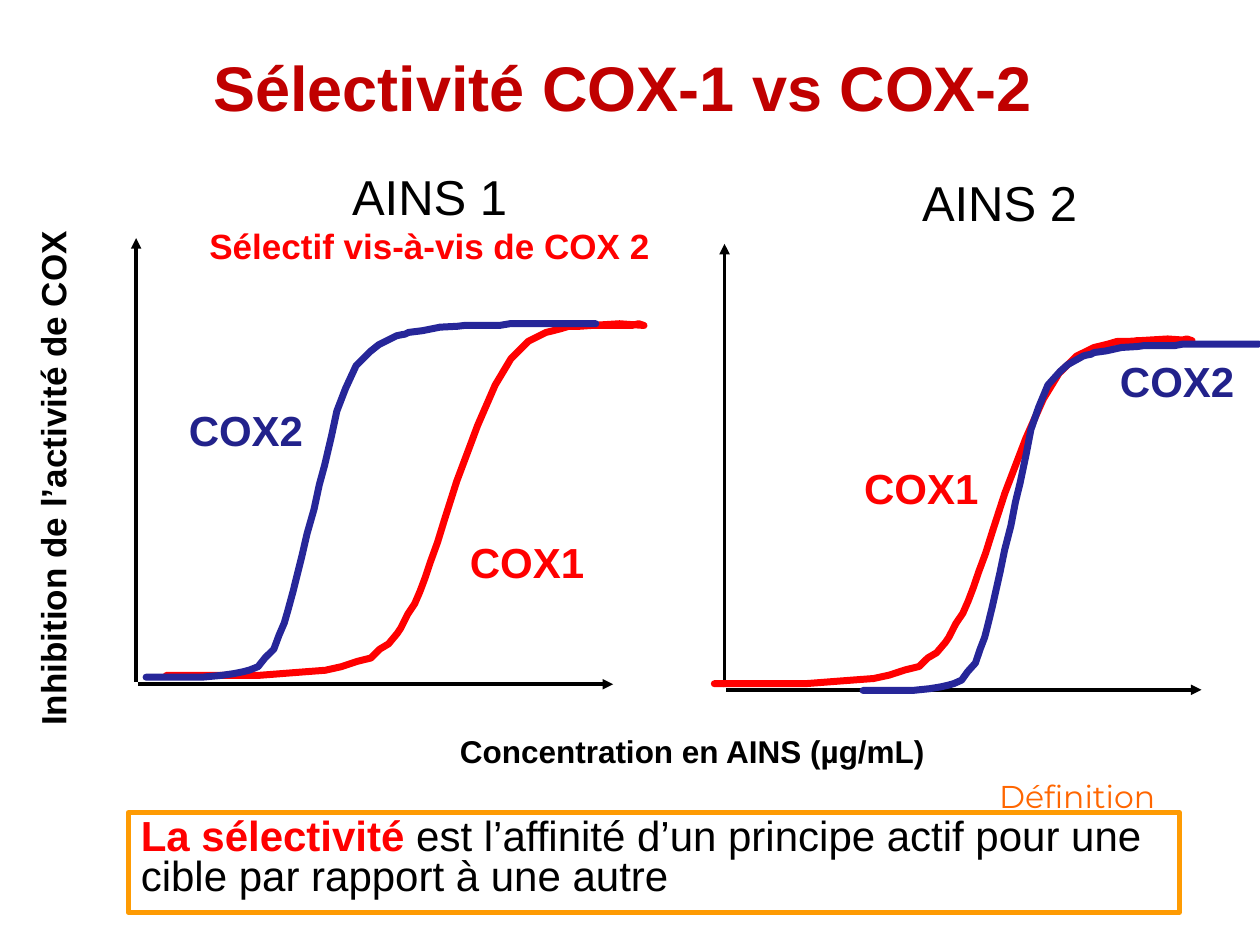
from lxml.etree import SubElement
from pptx import Presentation
from pptx.dml.color import RGBColor
from pptx.enum.shapes import MSO_CONNECTOR, MSO_SHAPE
from pptx.enum.text import MSO_ANCHOR as ANCHOR, MSO_AUTO_SIZE as AUTO, PP_ALIGN as ALIGN
from pptx.oxml.ns import qn
from pptx.util import Pt

rgb = RGBColor.from_string
BLACK, RED, TITLE_RED = "000000", "FF0000", "C00000"
CURVE_BLUE, LABEL_BLUE, ORANGE = "262699", "22228B", "FF6600"


def write(para, text, size=24, color=BLACK, bold=False, font="Arial", align=ALIGN.LEFT):
    """Append one formatted span to a paragraph."""
    para.alignment = align
    span = para.add_run()
    span.text = text
    span.font.size, span.font.bold, span.font.name = Pt(size), bold, font
    span.font.color.rgb = rgb(color)


def style_line(shape, color, width):
    """Set the line and return its XML element, without any shadow."""
    shape.line.color.rgb = rgb(color)
    shape.line.width = Pt(width)
    properties = shape.line._get_or_add_ln()
    if properties.getparent().find(qn("a:effectLst")) is None:
        SubElement(properties.getparent(), qn("a:effectLst"))
    return properties


deck = Presentation()
deck.slide_width, deck.slide_height = Pt(720), Pt(540)
slide = deck.slides.add_slide(deck.slide_layouts[6])
shapes = slide.shapes

# Title
title = shapes.add_textbox(Pt(33.8), Pt(3.6), Pt(644.4), Pt(97.2))
frame = title.text_frame
frame.word_wrap, frame.vertical_anchor = True, ANCHOR.MIDDLE
frame.margin_left = frame.margin_right = Pt(16)
frame.margin_top = frame.margin_bottom = Pt(9.4)
frame.paragraphs[0].line_spacing = 0.9
write(frame.paragraphs[0], "Sélectivité COX-1 vs COX-2", size=36, color=TITLE_RED,
      bold=True, align=ALIGN.CENTER)

# Axes of both plots: the vertical one points up, the horizontal one right
for left, top in [(77.8, 136.1), (414, 139.3)]:
    base = top + 254.9
    for x1, y1, x2, y2 in [(left, base - 1.4, left, top), (left + 1, base, left + 272.6, base)]:
        axis = shapes.add_connector(MSO_CONNECTOR.STRAIGHT, Pt(x1), Pt(y1), Pt(x2), Pt(y2))
        SubElement(style_line(axis, BLACK, 2), qn("a:tailEnd"), type="triangle")

# Dose-response curves, in points from the top left of each curve
cox1 = [(0, 201), (52, 201), (78, 199), (91, 198), (100, 196), (109, 193), (117, 191),
        (122, 186), (127, 183), (132, 177), (134, 174), (138, 166), (142, 160), (145, 153),
        (148, 145), (151, 136), (155, 125), (159, 112), (166, 90), (178, 58), (188, 35),
        (197, 20), (207, 10), (217, 5), (221, 4), (225, 3), (230, 1.5), (236, 1.5),
        (243, 1), (259, 0), (273, 1), (270, 0), (266, 1), (251, 1), (241, 1)]
cox2 = [(0, 202), (32, 202), (43, 201), (50, 200), (55, 199), (59, 198), (64, 196),
        (68, 191), (73, 186), (76, 178), (79, 171), (81, 164), (84, 153), (86, 145),
        (89, 133), (92, 120), (96, 106), (99, 92), (102, 81), (106, 64), (109, 50),
        (114, 37), (120, 24), (125, 19), (128, 16), (133, 12), (139, 9), (143, 7),
        (145, 6.5), (148, 6), (150, 5), (158, 4), (168, 2), (178, 1.5), (182, 1),
        (202, 1), (208, 0), (257, 0)]
curves = [  # points, colour, left, top, horizontal and vertical scale
    (cox1, RED, 95, 185, 1, 1),
    (cox2, CURVE_BLUE, 83.5, 185, 1, 1),
    (cox1, RED, 408.2, 193.7, 1, 0.98),
    (cox2, CURVE_BLUE, 493.2, 196.6, 0.88, 0.98),
]
for points, color, left, top, x_scale, y_scale in curves:
    places = [(Pt(left + x * x_scale), Pt(top + y * y_scale)) for x, y in points]
    builder = shapes.build_freeform(*places[0])
    builder.add_line_segments(places[1:], close=False)
    curve = builder.convert_to_shape()
    curve.shadow.inherit = False
    curve.fill.background()
    line = style_line(curve, color, 4)
    line.set("cap", "rnd")
    SubElement(line, qn("a:round"))

# Definition box
box = shapes.add_shape(MSO_SHAPE.RECTANGLE, Pt(73.4), Pt(464.4), Pt(600.5), Pt(56.9))
box.shadow.inherit = False
box.fill.solid()
box.fill.fore_color.rgb = rgb("FFFFFF")
style_line(box, "FE9B03", 3)
frame = box.text_frame
frame.word_wrap, frame.vertical_anchor = True, ANCHOR.TOP
para = frame.paragraphs[0]
para.line_spacing = 0.8
write(para, "La sélectivité ", color=RED, bold=True)
write(para, "est l’affinité d’un principe actif pour une cible par rapport à une autre")

# Labels: left, top, width, height, wrap, rotation, paragraphs
blue_label = ("COX2", dict(color=LABEL_BLUE, bold=True))
red_label = ("COX1", dict(color=RED, bold=True))
labels = [
    (100.8, 227.5, 81.4, 36, True, 0, [blue_label]),
    (261.4, 303.1, 106.6, 36, True, 0, [red_label]),
    (632.9, 199.4, 85, 36, True, 0, [blue_label]),
    (486.7, 260.6, 106.6, 36, True, 0, [red_label]),
    (201.6, 414.7, 388.1, 28.8, True, 0,
     [("Concentration en AINS (µg/mL)", dict(size=18, bold=True, align=ALIGN.CENTER))]),
    (-119.5, 257, 298.8, 31, False, 270,
     [("Inhibition de l’activité de COX", dict(size=20, bold=True))]),
    (108.7, 91.4, 273.6, 65.5, False, 0,
     [("AINS 1", dict(size=28, align=ALIGN.CENTER)),
      ("Sélectif vis-à-vis de COX 2",
       dict(size=20, color=RED, bold=True, align=ALIGN.CENTER))]),
    (519.8, 95, 111.6, 41, False, 0, [("AINS 2", dict(size=28))]),
    (563.8, 440.6, 110.2, 28.8, False, 0,
     [("Définition", dict(size=18, color=ORANGE, font="Montserrat"))]),
]
for left, top, width, height, wrap, rotation, lines in labels:
    label = shapes.add_textbox(Pt(left), Pt(top), Pt(width), Pt(height))
    label.rotation = rotation
    frame = label.text_frame
    frame.word_wrap, frame.auto_size = wrap, AUTO.SHAPE_TO_FIT_TEXT
    for index, (text, style) in enumerate(lines):
        para = frame.add_paragraph() if index else frame.paragraphs[0]
        write(para, text, **style)

deck.save("out.pptx")
